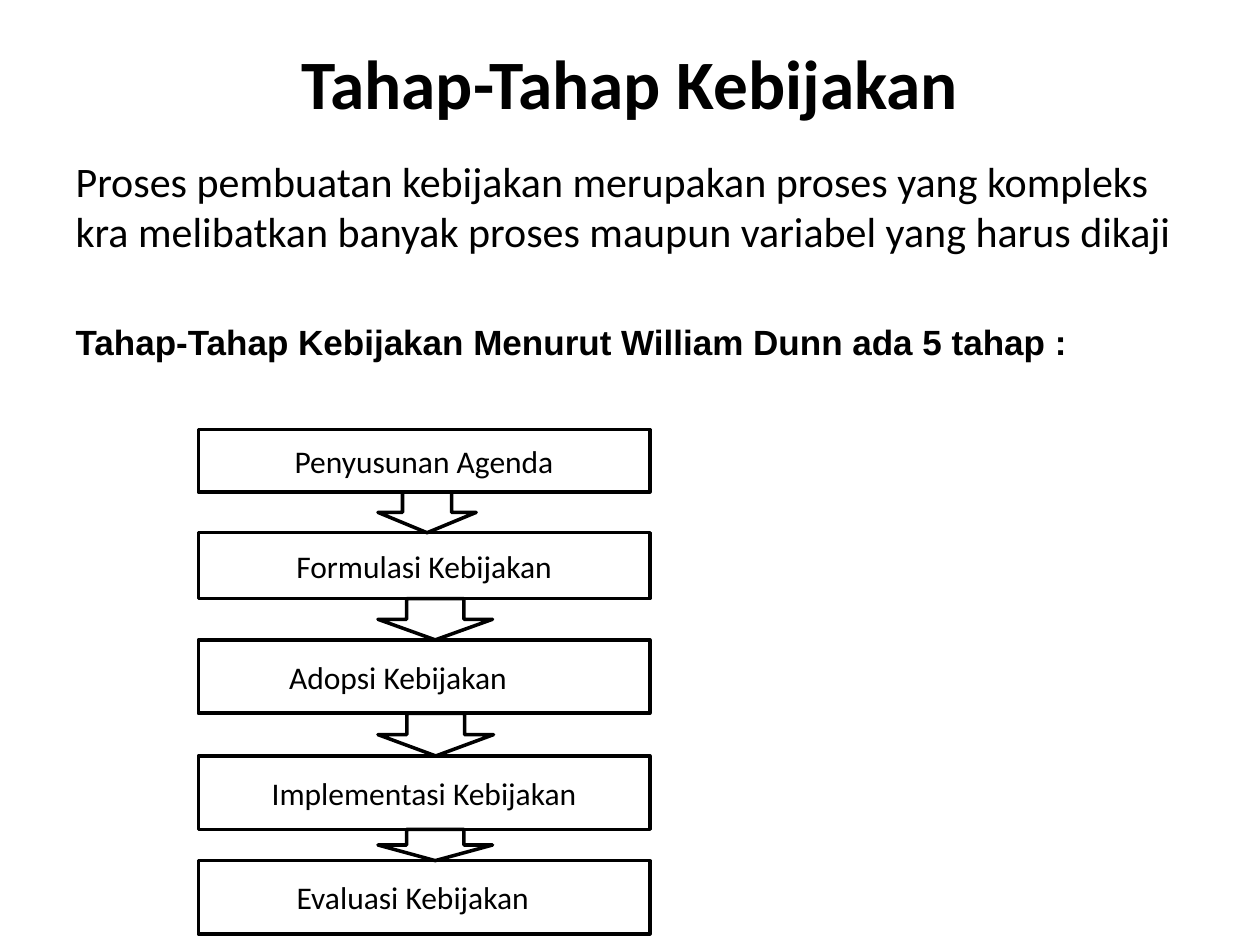
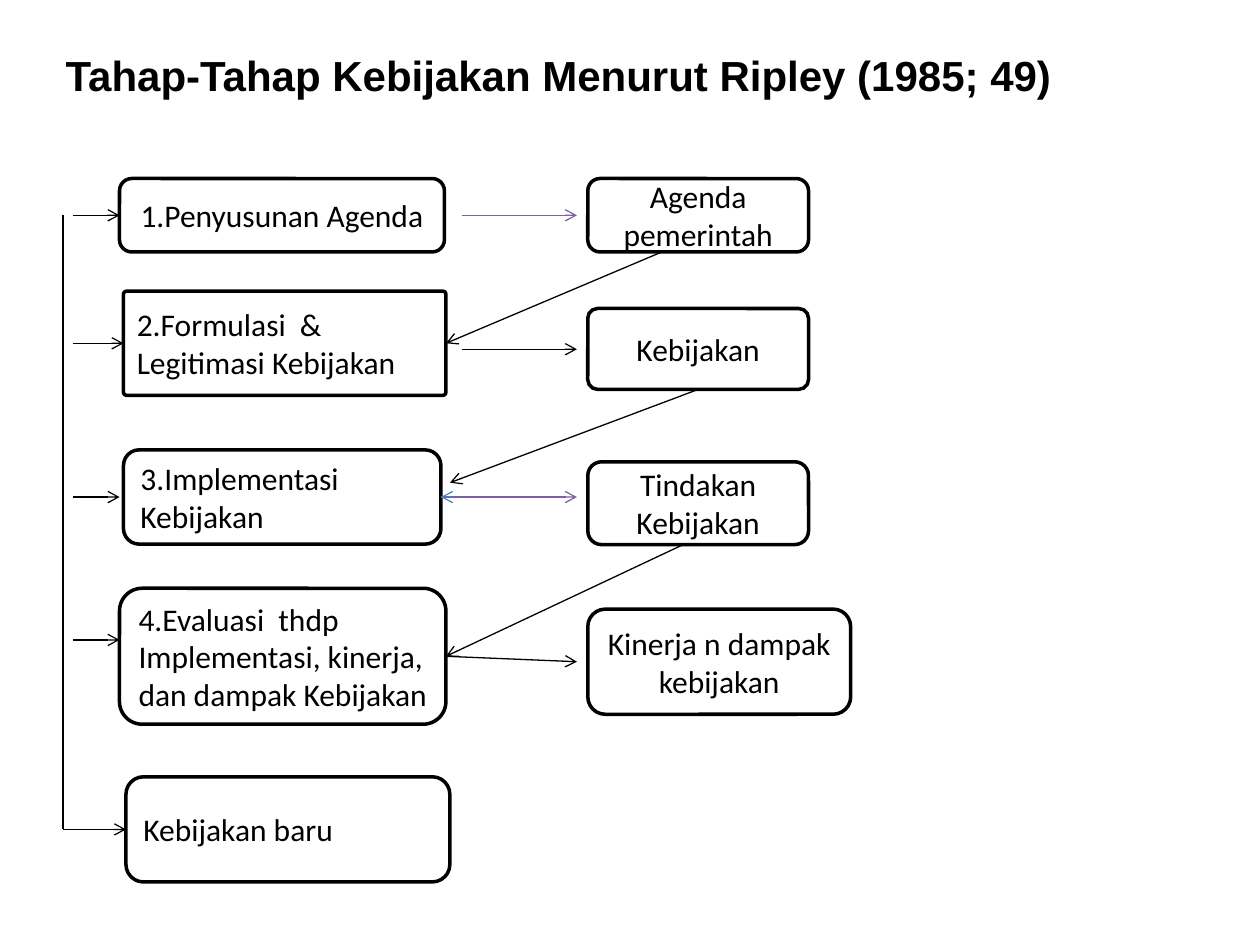
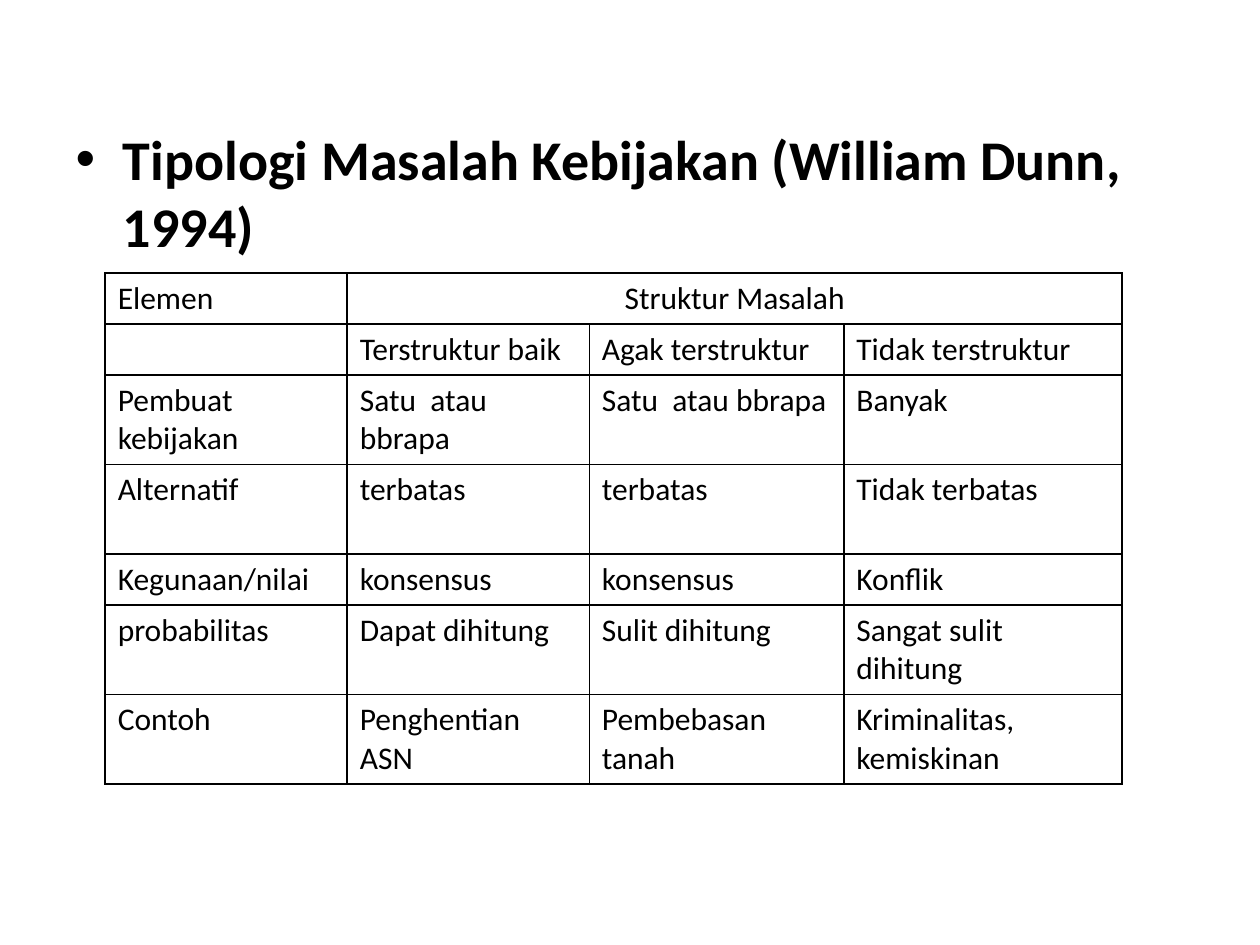
from dataclasses import dataclass
from lxml.etree import SubElement
from pptx import Presentation
from pptx.dml.color import RGBColor
from pptx.enum.shapes import MSO_CONNECTOR, MSO_SHAPE
from pptx.enum.text import MSO_ANCHOR, MSO_AUTO_SIZE, PP_ALIGN
from pptx.oxml import parse_xml
from pptx.oxml.ns import nsdecls, qn
from pptx.util import Cm, Pt


@dataclass(frozen=True)
class Theme:
    ink: RGBColor = RGBColor(0, 0, 0)
    paper: RGBColor = RGBColor(255, 255, 255)
    purple: RGBColor = RGBColor(0x7D, 0x60, 0xA0)
    blue: RGBColor = RGBColor(0x4B, 0x7E, 0xBC)
    font: str = "Calibri"
    head_font: str = "Arial"
    title: float = 39.6
    topic: float = 32
    lead: float = 24
    sub: float = 20
    label: float = 18
    outline: float = 2
    thin: float = 0.75
    grid: float = 1


T = Theme()
LEFT, CENTER = PP_ALIGN.LEFT, PP_ALIGN.CENTER
TOP, WEST, BOTTOM, EAST = range(4)

DUNN_TITLE = "Tahap-Tahap Kebijakan"
DUNN_INTRO = ("Proses pembuatan kebijakan merupakan proses yang kompleks "
              "kra melibatkan banyak proses maupun variabel yang harus dikaji")
DUNN_HEAD = "Tahap-Tahap Kebijakan Menurut William Dunn ada 5 tahap :"
STAGE_LEFT, STAGE_WIDTH, ARROW_LEFT = 4.0, 9.1, 7.62
STAGES = [
    ("Penyusunan Agenda", 8.66, 1.26, None),
    ("Formulasi Kebijakan", 10.74, 1.33, None),
    ("Adopsi Kebijakan", 12.9, 1.48, 1.83),
    ("Implementasi Kebijakan", 15.24, 1.48, None),
    ("Evaluasi Kebijakan", 17.35, 1.48, 1.98),
]
ARROW_WIDTHS = [1.98, 2.31, 2.33, 2.31]

RIPLEY_HEAD = "Tahap-Tahap Kebijakan Menurut Ripley (1985; 49)"
RIPLEY_BOXES = {
    "agenda": ("1.Penyusunan Agenda", (2.41, 3.6, 6.55, 1.48), CENTER, None),
    "formulation": ("2.Formulasi  & Legitimasi Kebijakan",
                    (2.49, 5.87, 6.5, 2.1), LEFT, 0.03),
    "implementation": ("3.Implementasi Kebijakan",
                       (2.49, 9.07, 6.4, 1.9), LEFT, None),
    "evaluation": ("4.Evaluasi  thdp Implementasi, kinerja, dan dampak Kebijakan",
                   (2.41, 11.86, 6.58, 2.74), LEFT, None),
    "new policy": ("Kebijakan baru", (2.54, 15.66, 6.53, 2.12), LEFT, None),
    "government": ("Agenda pemerintah", (11.85, 3.6, 4.45, 1.48), CENTER, None),
    "policy": ("Kebijakan", (11.85, 6.22, 4.45, 1.63), CENTER, 0.12),
    "action": ("Tindakan Kebijakan", (11.85, 9.31, 4.45, 1.67), CENTER, None),
    "impact": ("Kinerja n dampak kebijakan", (11.85, 12.28, 5.3, 2.12), CENTER, None),
}
RIPLEY_ARROWS = [
    ((9.32, 4.34), (11.63, 4.34), T.purple),
    ((9.32, 7.04), (11.63, 7.04), T.ink),
    (("implementation", EAST), (11.63, 10.02), T.purple),
    (("evaluation", EAST), (11.63, 13.34), T.ink),
    ((13.34, 5.08), ("formulation", EAST), T.ink),
    ((9.07, 10.02), ("implementation", EAST), T.blue),
    (("policy", BOTTOM), (9.07, 9.73), T.ink),
    ((13.77, 10.98), ("evaluation", EAST), T.ink),
    ((1.47, 4.34), ("agenda", WEST), T.ink),
    ((1.47, 6.92), ("formulation", WEST), T.ink),
    ((1.47, 10.02), (2.41, 10.02), T.ink),
    ((1.47, 12.9), (2.41, 12.9), T.ink),
    ((1.27, 16.72), ("new policy", WEST), T.ink),
]
FEEDBACK_LINE = ((1.27, 4.34), (1.27, 16.72))

TYPOLOGY_HEAD = "Tipologi Masalah Kebijakan (William Dunn, 1994)"
TYPOLOGY = [
    ("Elemen", "Struktur Masalah", "", ""),
    ("", "Terstruktur baik", "Agak terstruktur", "Tidak terstruktur"),
    ("Pembuat kebijakan", "Satu  atau bbrapa", "Satu  atau bbrapa", "Banyak"),
    ("Alternatif", "terbatas", "terbatas", "Tidak terbatas"),
    ("Kegunaan/nilai", "konsensus", "konsensus", "Konflik"),
    ("probabilitas", "Dapat dihitung", "Sulit dihitung", "Sangat sulit dihitung"),
    ("Contoh", "Penghentian ASN", "Pembebasan tanah", "Kriminalitas, kemiskinan"),
]
COL_WIDTHS = [4.88, 4.88, 5.13, 5.61]
ONE_LINE, TWO_LINES = 1.03, 1.8
ROW_HEIGHTS = [ONE_LINE, ONE_LINE, TWO_LINES, TWO_LINES, ONE_LINE, TWO_LINES, TWO_LINES]


def write(p, text, size, font=T.font, bold=False, align=LEFT):
    p.alignment = align
    r = p.add_run()
    r.text = text
    r.font.name, r.font.size, r.font.bold = font, Pt(size), bold
    r.font.color.rgb = T.ink


def place(sp, left, top, width, height):
    sp.left, sp.top, sp.width, sp.height = map(Cm, (left, top, width, height))
    sp.text_frame.auto_size = MSO_AUTO_SIZE.NONE
    sp.text_frame.word_wrap = True


def add_slide(prs, body_box, title=None):
    s = prs.slides.add_slide(prs.slide_layouts[1])
    if title:
        place(s.shapes.title, 1.27, 0.76, 22.86, 1.78)
        s.shapes.title.text_frame.vertical_anchor = MSO_ANCHOR.MIDDLE
        write(s.shapes.title.text_frame.paragraphs[0], title, T.title, bold=True, align=CENTER)
    else:
        el = s.shapes.title._element
        el.getparent().remove(el)
    body = s.placeholders[1]
    place(body, *body_box)
    return s, body.text_frame


def plain(p, before=0):
    pPr = p._p.get_or_add_pPr()
    pPr.set("marL", "0")
    pPr.set("indent", "0")
    SubElement(pPr, qn("a:buNone"))
    p.space_before = Pt(before)
    return p


def add_box(s, kind, box, text="", align=CENTER):
    sp = s.shapes.add_shape(kind, *map(Cm, box))
    sp.shadow.inherit = False
    sp.fill.solid()
    sp.fill.fore_color.rgb = T.paper
    sp.line.color.rgb = T.ink
    sp.line.width = Pt(T.outline)
    if text:
        tf = sp.text_frame
        tf.word_wrap = True
        tf.vertical_anchor = MSO_ANCHOR.MIDDLE
        if align == LEFT:
            tf.margin_right = Cm(0.2)
        write(tf.paragraphs[0], text, T.label, align=align)
    return sp


def add_line(s, boxes, start, end, color, arrow=True):
    def is_joint(point):
        return point[0] in boxes

    points = [(0, 0) if is_joint(pt) else pt for pt in (start, end)]
    c = s.shapes.add_connector(MSO_CONNECTOR.STRAIGHT, *(Cm(v) for pt in points for v in pt))
    for point, connect in ((start, c.begin_connect), (end, c.end_connect)):
        if is_joint(point):
            connect(boxes[point[0]], point[1])
    c.line.color.rgb = color
    c.line.width = Pt(T.thin)
    if arrow:
        SubElement(c.line._get_or_add_ln(), qn("a:tailEnd")).set("type", "arrow")
    SubElement(c._element.spPr, qn("a:effectLst"))


def add_borders(cell):
    tcPr = cell._tc.get_or_add_tcPr()
    for i, side in enumerate("LRTB"):
        tcPr.insert(i, parse_xml(
            f'<a:ln{side} {nsdecls("a")} w="{Pt(T.grid)}"><a:solidFill>'
            f'<a:srgbClr val="{T.ink}"/></a:solidFill></a:ln{side}>'))


def dunn_slide(prs):
    s, tf = add_slide(prs, (1.27, 3.0, 22.86, 15.85), DUNN_TITLE)
    write(plain(tf.paragraphs[0]), DUNN_INTRO, T.lead)
    write(plain(tf.add_paragraph(), 37), DUNN_HEAD, T.sub, T.head_font, True)
    for text, top, height, inset in STAGES:
        sp = add_box(s, MSO_SHAPE.RECTANGLE, (STAGE_LEFT, top, STAGE_WIDTH, height),
                     text, LEFT if inset else CENTER)
        if inset:
            sp.text_frame.margin_left = Cm(inset)
    for (_, top, height, _), (_, below, _, _), width in zip(STAGES, STAGES[1:], ARROW_WIDTHS):
        bottom = top + height
        add_box(s, MSO_SHAPE.DOWN_ARROW, (ARROW_LEFT, bottom, width, below - bottom))


def ripley_slide(prs):
    s, tf = add_slide(prs, (1.07, 0.88, 23.06, 17.9))
    write(plain(tf.paragraphs[0]), RIPLEY_HEAD, T.lead, T.head_font, True)
    boxes = {}
    for name, (text, box, align, corner) in RIPLEY_BOXES.items():
        sp = boxes[name] = add_box(s, MSO_SHAPE.ROUNDED_RECTANGLE, box, text, align)
        if corner is not None:
            sp.adjustments[0] = corner
    for start, end, color in RIPLEY_ARROWS:
        add_line(s, boxes, start, end, color)
    add_line(s, boxes, *FEEDBACK_LINE, T.ink, arrow=False)


def typology_slide(prs):
    s, tf = add_slide(prs, (1.27, 2.38, 22.86, 14.68))
    p = tf.paragraphs[0]
    p.space_before = Pt(0)
    write(p, TYPOLOGY_HEAD, T.topic, bold=True)
    tbl = s.shapes.add_table(len(TYPOLOGY), len(COL_WIDTHS), Cm(2.12), Cm(5.5),
                             Cm(sum(COL_WIDTHS)), Cm(sum(ROW_HEIGHTS))).table
    tbl.first_row = tbl.horz_banding = False
    for col, width in zip(tbl.columns, COL_WIDTHS):
        col.width = Cm(width)
    for row, height in zip(tbl.rows, ROW_HEIGHTS):
        row.height = Cm(height)
    tbl.cell(0, 1).merge(tbl.cell(0, 3))
    for i, texts in enumerate(TYPOLOGY):
        for j, text in enumerate(texts):
            cell = tbl.cell(i, j)
            cell.fill.background()
            add_borders(cell)
            if text:
                write(cell.text_frame.paragraphs[0], text, T.label,
                      align=CENTER if cell.is_merge_origin else LEFT)


def main():
    prs = Presentation()
    prs.slide_width, prs.slide_height = Cm(25.4), Cm(19.05)
    dunn_slide(prs)
    ripley_slide(prs)
    typology_slide(prs)
    prs.save("out.pptx")


if __name__ == "__main__":
    main()
